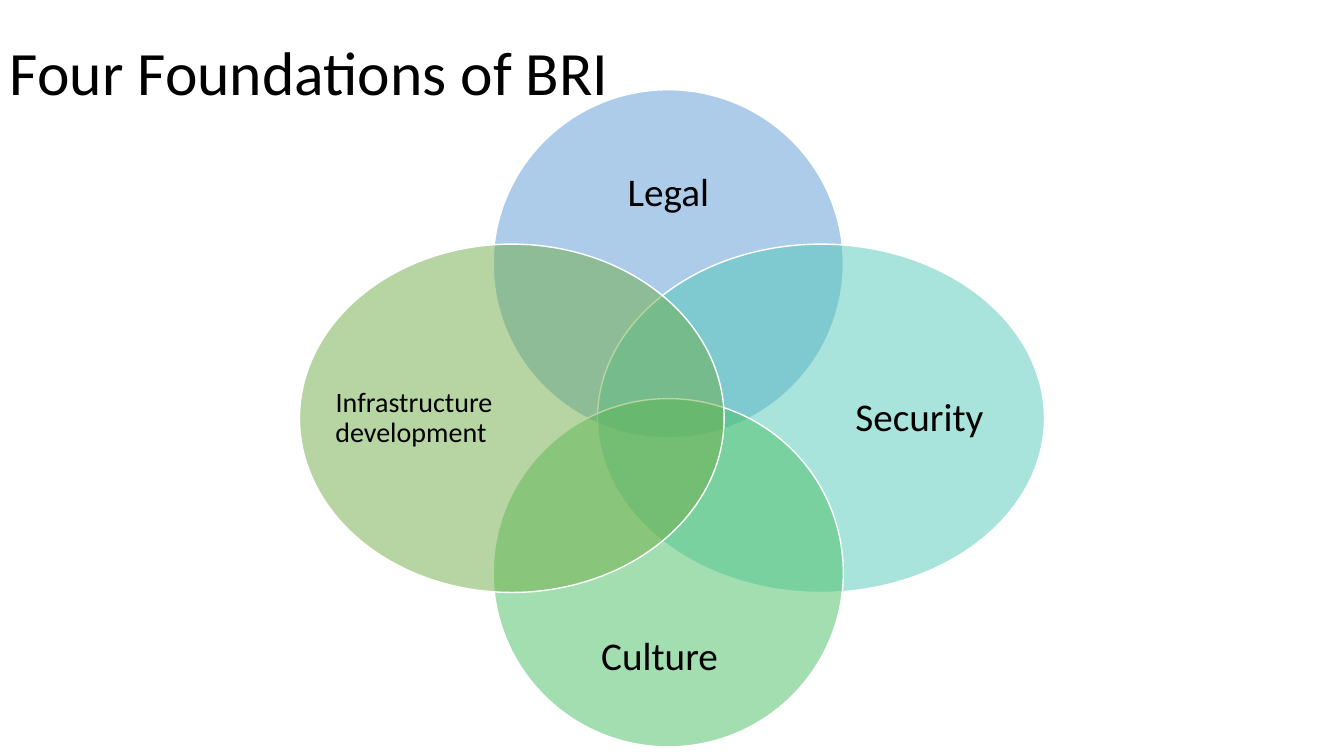
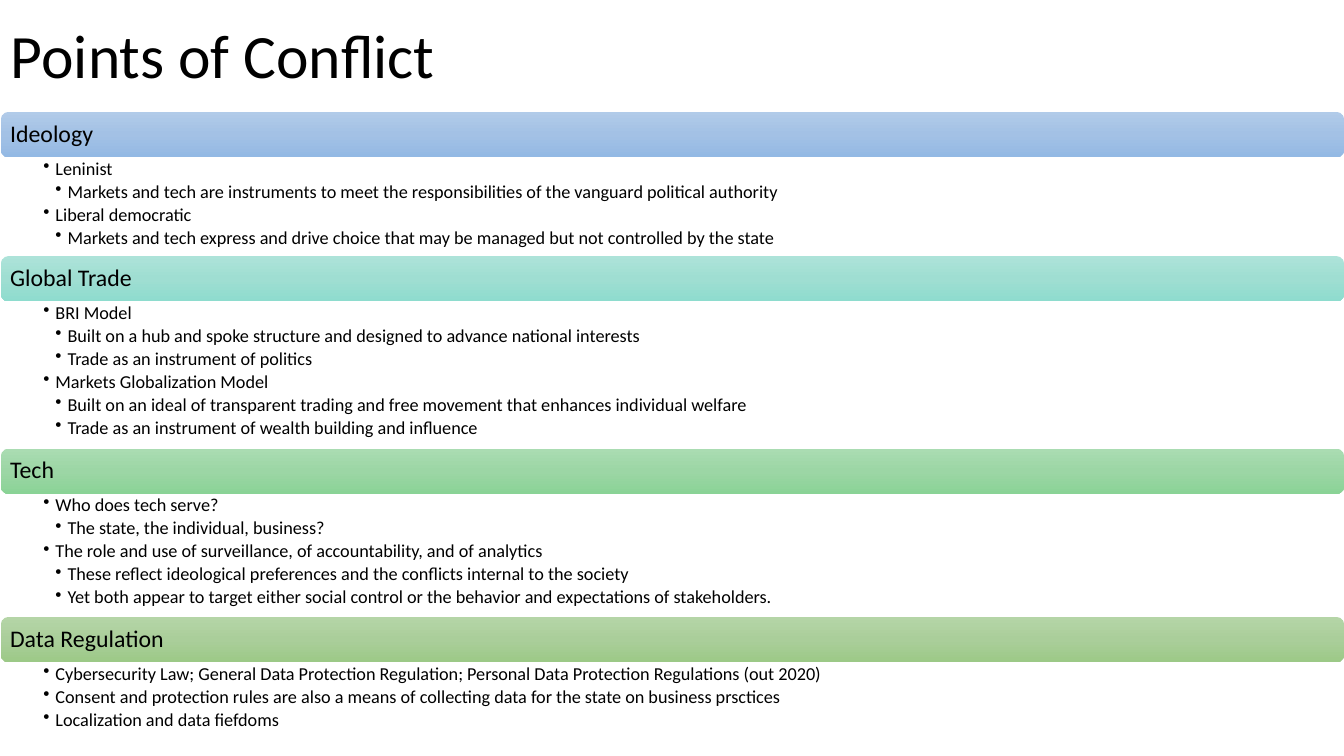
from copy import deepcopy
from dataclasses import dataclass

from lxml import etree
from pptx import Presentation
from pptx.dml.color import RGBColor
from pptx.enum.shapes import MSO_SHAPE
from pptx.enum.text import MSO_ANCHOR, PP_ALIGN
from pptx.oxml.ns import qn
from pptx.util import Inches, Pt

ELLIPSE, ROUNDED = MSO_SHAPE.OVAL, MSO_SHAPE.ROUNDED_RECTANGLE
TOP, MIDDLE = MSO_ANCHOR.TOP, MSO_ANCHOR.MIDDLE
LEFT, CENTER = PP_ALIGN.LEFT, PP_ALIGN.CENTER

BLACK = RGBColor(0x00, 0x00, 0x00)
WHITE = RGBColor(0xFF, 0xFF, 0xFF)
BLUE = RGBColor(0x5B, 0x9B, 0xD5)
TEAL = RGBColor(0x52, 0xCA, 0xB8)
GREEN = RGBColor(0x49, 0xBF, 0x64)
OLIVE = RGBColor(0x70, 0xAD, 0x47)
BLUE_BAND = (RGBColor(0xB1, 0xCB, 0xE9), RGBColor(0xA3, 0xC1, 0xE5), RGBColor(0x93, 0xB9, 0xE4))
TEAL_BAND = (RGBColor(0xAD, 0xE3, 0xD9), RGBColor(0x9F, 0xDE, 0xD2), RGBColor(0x8E, 0xDC, 0xCE))
GREEN_BAND = (RGBColor(0xAA, 0xDC, 0xB2), RGBColor(0x9C, 0xD6, 0xA5), RGBColor(0x8A, 0xD3, 0x96))
OLIVE_BAND = (RGBColor(0xB5, 0xD5, 0xA7), RGBColor(0xAA, 0xCE, 0x9A), RGBColor(0x9C, 0xC9, 0x87))

FONT = "Calibri"
SLIDE_WIDTH, SLIDE_HEIGHT = 13.33, 7.5
TITLE_INSETS = (0.1, 0.05, 0.1, 0.05)
NO_INSETS = (0, 0, 0, 0)
BAND_INSETS = (0.07, 0.07, 0.07, 0.07)
LIST_INSETS = (0.42, 0.02, 0.13, 0.02)
BAND_HEIGHT, ROW_HEIGHT, ROW_PAD = 0.45, 0.24, 0.02
BULLET_INDENT = 0.12
DIAMETER = 0.53
SIDE_TOP = (1 - DIAMETER) / 2

PETALS = [
    (BLUE, (0.26, 0, 0.47, DIAMETER), (0.12, 0.14, 0.76, 0.32), [("Legal", 28)]),
    (TEAL, (0.4, SIDE_TOP, 0.6, DIAMETER), (0.54, 0.12, 0.38, 0.76), [("Security ", 28)]),
    (GREEN, (0.26, 1 - DIAMETER, 0.47, DIAMETER), (0.12, 0.55, 0.76, 0.32),
     [("Culture", 28), (" ", 55)]),
    (OLIVE, (0, SIDE_TOP, 0.57, DIAMETER), (0.08, 0.12, 0.38, 0.76),
     [("Infrastructure development ", 20)]),
]

CONFLICTS = [
    ("Ideology", BLUE_BAND, [
        (1, "Leninist"),
        (2, "Markets and tech are instruments to meet the responsibilities of the vanguard "
            "political authority"),
        (1, "Liberal democratic"),
        (2, "Markets and tech express and drive choice that may be managed but not controlled "
            "by the state"),
    ]),
    ("Global Trade", TEAL_BAND, [
        (1, "BRI Model"),
        (2, "Built on a hub and spoke structure and designed to advance national interests"),
        (2, "Trade as an instrument of politics"),
        (1, "Markets Globalization Model"),
        (2, "Built on an ideal of transparent trading and free movement that enhances "
            "individual welfare"),
        (2, "Trade as an instrument of wealth building and influence"),
    ]),
    ("Tech", GREEN_BAND, [
        (1, "Who does tech serve?"),
        (2, "The state, the individual, business?"),
        (1, "The role and use of surveillance, of accountability, and of analytics"),
        (2, "These reflect ideological preferences and the conflicts internal to the society"),
        (2, "Yet both appear to target either social control or the behavior and expectations "
            "of stakeholders."),
    ]),
    ("Data Regulation", OLIVE_BAND, [
        (1, "Cybersecurity Law; General Data Protection Regulation; Personal Data Protection "
            "Regulations (out 2020)"),
        (1, "Consent and protection rules are also a means of collecting data for the state "
            "on business prsctices"),
        (1, "Localization and data fiefdoms"),
    ]),
]


@dataclass
class Box:
    """A rectangle in inches."""
    left: float
    top: float
    width: float
    height: float

    def share(self, left, top, width, height):
        """Return the part of this box given as shares of its size."""
        return Box(self.left + left * self.width, self.top + top * self.height,
                   width * self.width, height * self.height)

    def inches(self):
        """Return the four lengths for python-pptx."""
        return [Inches(length) for length in (self.left, self.top, self.width, self.height)]


def add_bullet(para, level):
    """Give a paragraph a hanging bullet at its level."""
    para.level = level
    properties = para._p.get_or_add_pPr()
    properties.set("marL", str(Inches(BULLET_INDENT * level)))
    properties.set("indent", str(-Inches(BULLET_INDENT)))
    etree.SubElement(properties, qn("a:buChar")).set("char", "•")


def add_text(page, box, paragraphs, insets=NO_INSETS, anchor=MIDDLE, align=LEFT, after=0):
    """Write paragraphs, each a level and a list of (text, size) spans."""
    frame = page.shapes.add_textbox(*box.inches()).text_frame
    frame.word_wrap = True
    frame.vertical_anchor = anchor
    (frame.margin_left, frame.margin_top,
     frame.margin_right, frame.margin_bottom) = map(Inches, insets)
    for index, (level, spans) in enumerate(paragraphs):
        para = frame.add_paragraph() if index else frame.paragraphs[0]
        if level:
            add_bullet(para, level)
        para.alignment = align
        para.line_spacing = 0.9
        para.space_after = Pt(after)
        for text, size in spans:
            span = para.add_run()
            span.text = text
            span.font.name = FONT
            span.font.size = Pt(size)
            span.font.color.rgb = BLACK


def add_title(page, box, text):
    """Write the slide title."""
    add_text(page, box, [(0, [(text, 44)])], insets=TITLE_INSETS)


def add_petal(page, box, color):
    """Draw a half-transparent ellipse with a white outline."""
    petal = page.shapes.add_shape(ELLIPSE, *box.inches())
    petal.shadow.inherit = False
    petal.fill.solid()
    petal.fill.fore_color.rgb = color
    petal.line.color.rgb = WHITE
    petal.line.width = Pt(1)
    tint = petal._element.spPr.find(qn("a:solidFill"))[0]
    etree.SubElement(tint, qn("a:alpha")).set("val", "50000")


def add_venn(page, box):
    """Draw the four overlapping foundations and their labels."""
    for color, petal_share, label_share, spans in PETALS:
        petal_box = box.share(*petal_share)
        add_petal(page, petal_box, color)
        add_text(page, petal_box.share(*label_share), [(0, spans)], align=CENTER)


def add_band(page, box, heading, colors):
    """Draw a rounded gradient band with its heading."""
    band = page.shapes.add_shape(ROUNDED, *box.inches())
    band.shadow.inherit = False
    band.line.fill.background()
    band.fill.gradient()
    band.fill.gradient_angle = 270
    stops = band._element.spPr.find(qn("a:gradFill")).find(qn("a:gsLst"))
    stops.insert(1, deepcopy(stops[0]))
    for index, (stop, color) in enumerate(zip(band.fill.gradient_stops, colors)):
        stop.position = index / 2
        stop.color.rgb = color
    add_text(page, box, [(0, [(heading, 17)])], insets=(0.09, *BAND_INSETS[1:]))


def add_conflicts(page, box):
    """Stack the headed lists from the top of the box."""
    top = box.top
    for heading, colors, rows in CONFLICTS:
        add_band(page, Box(box.left, top, box.width, BAND_HEIGHT), heading, colors)
        top += BAND_HEIGHT
        height = ROW_HEIGHT * len(rows) + ROW_PAD
        paragraphs = [(level, [(text, 13)]) for level, text in rows]
        add_text(page, Box(box.left, top, box.width, height), paragraphs,
                 insets=LIST_INSETS, anchor=TOP, after=2.4)
        top += height


def main():
    """Build and save the deck."""
    deck = Presentation()
    deck.slide_width, deck.slide_height = Inches(SLIDE_WIDTH), Inches(SLIDE_HEIGHT)
    blank = deck.slide_layouts[6]

    page = deck.slides.add_slide(blank)
    add_title(page, Box(0, 0.02, 11.5, 1.45), "Four Foundations of BRI")
    add_venn(page, Box(2.97, 0.89, 7.39, 6.52))

    page = deck.slides.add_slide(blank)
    add_title(page, Box(0.01, 0, 11.5, 1.17), "Points of Conflict")
    add_conflicts(page, Box(0.01, 1.11, 13.32, 6.19))

    deck.save("out.pptx")


if __name__ == "__main__":
    main()
